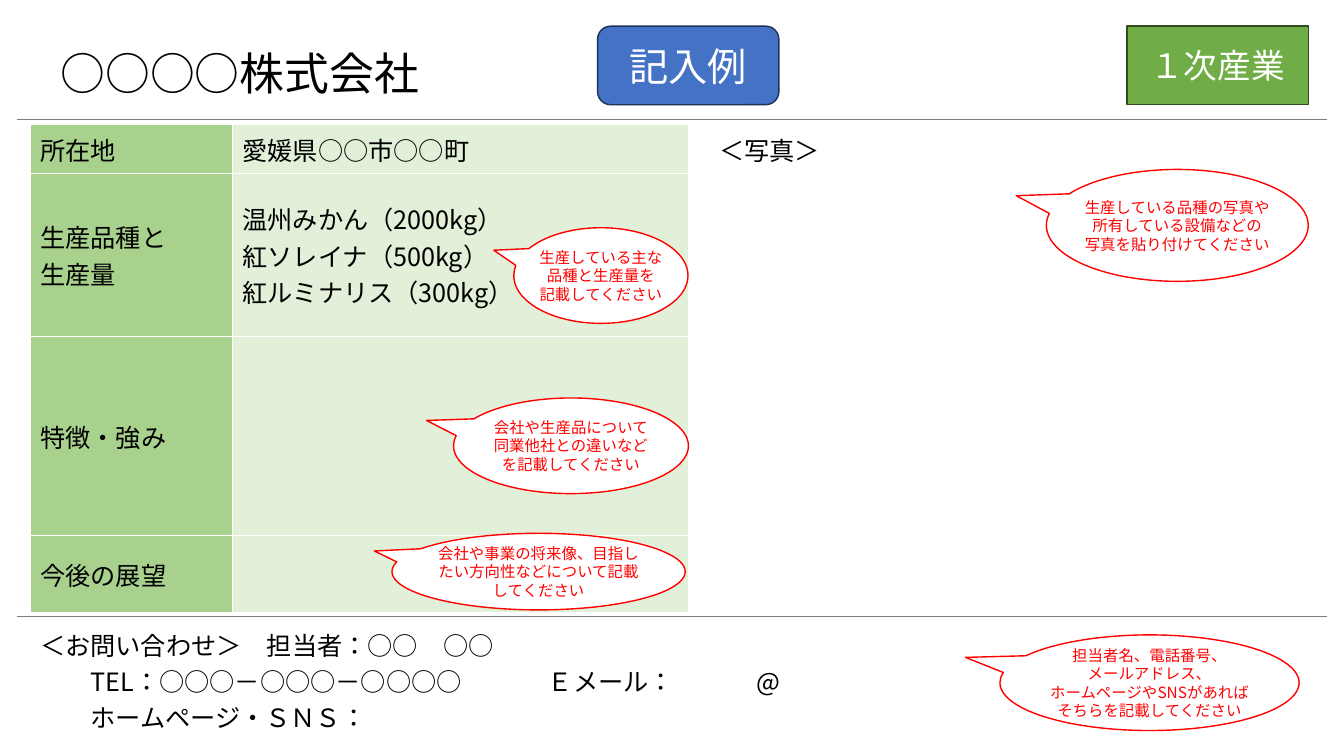
"""Build a company profile slide with a table, guidance callouts and contact details."""
from dataclasses import dataclass

from lxml import etree
from pptx import Presentation
from pptx.dml.color import RGBColor
from pptx.enum.lang import MSO_LANGUAGE_ID
from pptx.enum.shapes import MSO_CONNECTOR, MSO_SHAPE
from pptx.enum.text import MSO_ANCHOR, MSO_AUTO_SIZE, PP_ALIGN
from pptx.oxml.ns import qn
from pptx.slide import Slide
from pptx.text.text import TextFrame
from pptx.util import Cm, Pt

FONT_NAME = "Noto Sans CJK JP"
BLACK = RGBColor(0x00, 0x00, 0x00)
WHITE = RGBColor(0xFF, 0xFF, 0xFF)
RED = RGBColor(0xFF, 0x00, 0x00)
GRAY = RGBColor(0x80, 0x80, 0x80)
BLUE = RGBColor(0x44, 0x72, 0xC4)
DARK_BLUE = RGBColor(0x1E, 0x32, 0x56)
GREEN = RGBColor(0x70, 0xAD, 0x47)
DARK_GREEN = RGBColor(0x31, 0x4C, 0x1F)
LABEL_GREEN = RGBColor(0xA9, 0xD1, 0x8E)
PALE_GREEN = RGBColor(0xE2, 0xF0, 0xD9)

JAPANESE = MSO_LANGUAGE_ID.JAPANESE
LEFT, CENTER = PP_ALIGN.LEFT, PP_ALIGN.CENTER
MIDDLE = MSO_ANCHOR.MIDDLE
GROW = MSO_AUTO_SIZE.SHAPE_TO_FIT_TEXT
RECTANGLE, ROUNDED = MSO_SHAPE.RECTANGLE, MSO_SHAPE.ROUNDED_RECTANGLE
CALLOUT = MSO_SHAPE.OVAL_CALLOUT
STRAIGHT = MSO_CONNECTOR.STRAIGHT

MARGIN = 0.76
TABLE_TOP = 3.14
COLUMN_WIDTHS = (5.1, 11.49)
ROW_HEIGHTS = (1.24, 4.1, 5.02, 1.95)
RULE_START, RULE_END = 0.43, 33.43
CONTACT_TABS = (1.27, 12.8, 18.06)
NO_INSETS = {f"margin_{side}": 0 for side in ("left", "top", "right", "bottom")}


@dataclass(frozen=True)
class Box:
    """Position and size in centimetres."""

    left: float
    top: float
    width: float
    height: float

    def lengths(self) -> tuple[Cm, Cm, Cm, Cm]:
        """Return the four lengths in drawing order."""
        return Cm(self.left), Cm(self.top), Cm(self.width), Cm(self.height)


@dataclass(frozen=True)
class Panel:
    """A filled shape with centred text."""

    box: Box
    text: str
    kind: int = CALLOUT
    fill: RGBColor = WHITE
    line: RGBColor = RED
    color: RGBColor = RED
    size: int = 11
    tail: tuple[float, ...] = (-0.615, -0.265)


PANELS = (
    Panel(Box(28.4, 0.66, 4.57, 1.98), "１次産業", RECTANGLE, GREEN, DARK_GREEN, WHITE, 24, ()),
    Panel(Box(15.06, 0.66, 4.57, 1.98), "記入例", ROUNDED, BLUE, DARK_BLUE, WHITE, 28, ()),
    Panel(Box(12.95, 5.74, 4.39, 2.41), "生産している主な\n品種と生産量を\n記載してください"),
    Panel(Box(11.43, 10.03, 5.92, 2.41),
          "会社や生産品について\n同業他社との違いなど\nを記載してください"),
    Panel(Box(9.88, 13.44, 7.39, 1.93),
          "会社や事業の将来像、目指したい方向性などについて記載してください",
          tail=(-0.56, -0.269)),
    Panel(Box(26.37, 4.27, 6.6, 2.82),
          "生産している品種の写真や\n所有している設備などの\n写真を貼り付けてください"),
    Panel(Box(25.2, 16.0, 7.54, 2.41),
          "担当者名、電話番号、\nメールアドレス、\nホームページやSNSがあればそちらを記載してください"),
)

PROFILE = (
    ("所在地", "愛媛県○○市○○町"),
    ("生産品種と\n生産量", "温州みかん（2000kg）\n紅ソレイナ（500kg）\n紅ルミナリス（300kg）"),
    ("特徴・強み", ""),
    ("今後の展望", ""),
)
CONTACT = (
    "＜お問い合わせ＞　担当者：○○　○○\n"
    "\tTEL：○○○－○○○－○○○○\tＥメール：\t@\n"
    "\tホームページ・ＳＮＳ："
)


def apply(target: object, formats: dict[str, object]) -> None:
    """Set every named attribute on the target."""
    for name, value in formats.items():
        setattr(target, name, value)


def write(frame: TextFrame, text: str, size: int, color: RGBColor = BLACK,
          alignment: int = LEFT, spacing: float = 1.0) -> None:
    """Fill a text frame with uniformly formatted paragraphs."""
    frame.text = text
    for paragraph in frame.paragraphs:
        apply(paragraph, {"alignment": alignment, "line_spacing": spacing})
        for run in paragraph.runs:
            apply(run.font, {"name": FONT_NAME, "size": Pt(size), "language_id": JAPANESE})
            run.font.color.rgb = color
            east_asian = etree.SubElement(run.font._element, qn("a:ea"))
            east_asian.set("typeface", FONT_NAME)


def add_title(slide: Slide) -> None:
    """Place the company name in the title placeholder."""
    title = slide.shapes.title
    names = ("left", "top", "width", "height")
    apply(title, dict(zip(names, Box(1.27, 0.66, 23.34, 2.49).lengths())))
    write(title.text_frame, "○○○○株式会社", 32, spacing=0.9)
    apply(title.text_frame, {"vertical_anchor": MIDDLE, "word_wrap": True})


def add_rule(slide: Slide, top: float) -> None:
    """Draw a thin horizontal divider."""
    rule = slide.shapes.add_connector(
        STRAIGHT, Cm(RULE_START), Cm(top), Cm(RULE_END), Cm(top))
    rule.line.color.rgb = GRAY
    rule.line.width = Pt(0.5)
    etree.SubElement(rule._element.spPr, qn("a:effectLst"))


def add_text(slide: Slide, box: Box, text: str) -> TextFrame:
    """Add a wrapping text box that grows with its text."""
    frame = slide.shapes.add_textbox(*box.lengths()).text_frame
    apply(frame, {"word_wrap": True, "auto_size": GROW})
    write(frame, text, 18, spacing=1.2)
    return frame


def add_contact(slide: Slide) -> None:
    """Add the contact lines with tab stops."""
    frame = add_text(slide, Box(MARGIN, 15.6, 32.21, 2.97), CONTACT)
    for paragraph in frame.paragraphs[1:]:
        stops = etree.SubElement(paragraph._p.get_or_add_pPr(), qn("a:tabLst"))
        for position in CONTACT_TABS:
            etree.SubElement(stops, qn("a:tab"), pos=str(Cm(position)), algn="l")


def add_profile(slide: Slide) -> None:
    """Add the profile table with white cell borders."""
    box = Box(MARGIN, TABLE_TOP, sum(COLUMN_WIDTHS), sum(ROW_HEIGHTS))
    table = slide.shapes.add_table(
        len(PROFILE), len(COLUMN_WIDTHS), *box.lengths()).table
    apply(table, {"first_row": False, "horz_banding": False})
    for column, width in zip(table.columns, COLUMN_WIDTHS):
        column.width = Cm(width)
    for row, height, texts in zip(table.rows, ROW_HEIGHTS, PROFILE):
        row.height = Cm(height)
        for cell, text, color in zip(row.cells, texts, (LABEL_GREEN, PALE_GREEN)):
            write(cell.text_frame, text, 18)
            cell.vertical_anchor = MIDDLE
            cell.fill.solid()
            cell.fill.fore_color.rgb = color
            properties = cell._tc.get_or_add_tcPr()
            for index, side in enumerate(("lnL", "lnR", "lnT", "lnB")):
                border = etree.Element(qn(f"a:{side}"), w=str(Pt(1)))
                fill = etree.SubElement(border, qn("a:solidFill"))
                etree.SubElement(fill, qn("a:srgbClr"), val=str(WHITE))
                properties.insert(index, border)


def add_panel(slide: Slide, panel: Panel) -> None:
    """Draw a badge or a guidance callout."""
    shape = slide.shapes.add_shape(panel.kind, *panel.box.lengths())
    shape.shadow.inherit = False
    shape.fill.solid()
    shape.fill.fore_color.rgb = panel.fill
    shape.line.color.rgb = panel.line
    shape.line.width = Pt(1)
    for index, value in enumerate(panel.tail):
        shape.adjustments[index] = value
    insets = NO_INSETS if panel.kind == CALLOUT else {}
    apply(shape.text_frame, {"word_wrap": True, "vertical_anchor": MIDDLE, **insets})
    write(shape.text_frame, panel.text, panel.size, panel.color, CENTER)


def main() -> None:
    """Assemble and save the slide."""
    presentation = Presentation()
    apply(presentation, {"slide_width": Cm(33.87), "slide_height": Cm(19.05)})
    slide = presentation.slides.add_slide(presentation.slide_layouts[5])
    add_title(slide)
    for top in (3.0, 15.54):
        add_rule(slide, top)
    add_contact(slide)
    add_profile(slide)
    add_text(slide, Box(17.88, TABLE_TOP, 4.93, 1.12), "＜写真＞")
    for panel in PANELS:
        add_panel(slide, panel)
    presentation.save("out.pptx")


if __name__ == "__main__":
    main()
